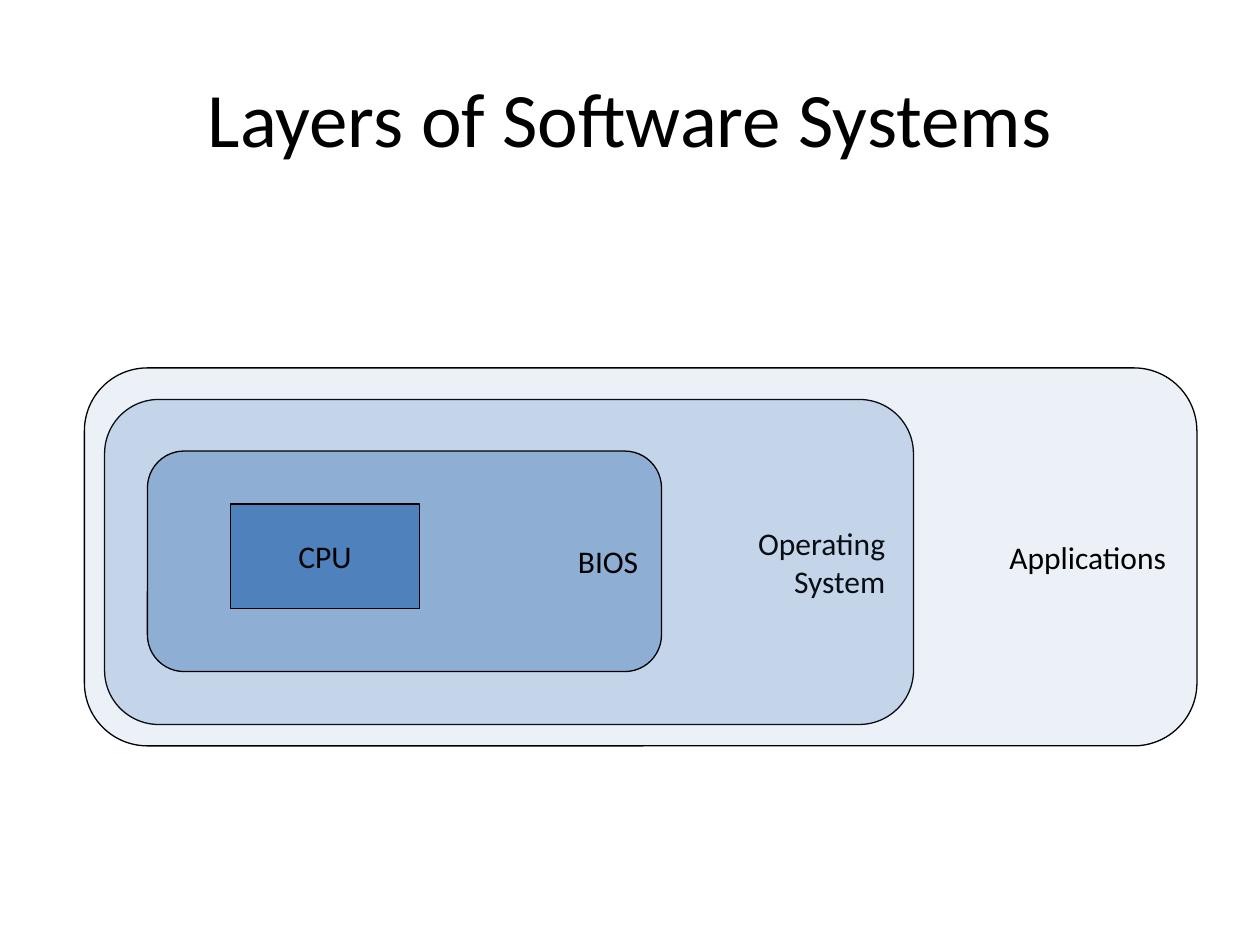
from dataclasses import dataclass

from lxml import etree
from pptx import Presentation
from pptx import util as u
from pptx.dml.color import RGBColor
from pptx.enum import shapes, text
from pptx.oxml.ns import qn


@dataclass(frozen=True)
class Theme:
    blue: RGBColor = RGBColor(0x4F, 0x81, 0xBD)
    ink: RGBColor = RGBColor(0, 0, 0)
    font: str = "Calibri"
    head: int = 44
    body: int = 18
    edge: float = 0.75


THEME = Theme()
ROUND = shapes.MSO_SHAPE.ROUNDED_RECTANGLE
RECT = shapes.MSO_SHAPE.RECTANGLE
RIGHT = text.PP_ALIGN.RIGHT
CENTER = text.PP_ALIGN.CENTER

# Label, preset, box in inches, opacity in percent, alignment; back to front
LAYERS = [
    ("Operating\nSystem", ROUND, (0.83, 3.17, 6.42, 2.58), 24, RIGHT),
    ("Applications", ROUND, (0.67, 2.92, 8.83, 3), 11, RIGHT),
    ("BIOS", ROUND, (1.17, 3.58, 4.08, 1.75), 46, RIGHT),
    ("CPU", RECT, (1.83, 4, 1.5, 0.83), 100, CENTER),
]


def apply(item, values):
    for name, value in values.items():
        setattr(item, name, value)


def write(frame, words, size, align):
    apply(frame, {"text": words, "word_wrap": True,
                  "vertical_anchor": text.MSO_ANCHOR.MIDDLE})
    for para in frame.paragraphs:
        para.alignment = align
        for run in para.runs:
            apply(run.font, {"name": THEME.font, "size": u.Pt(size)})
            run.font.color.rgb = THEME.ink


def fade(shape, percent):
    """Set the opacity of a solid fill."""
    color = shape.fill._xPr.find(qn("a:solidFill"))[0]
    etree.SubElement(color, qn("a:alpha")).set("val", str(percent * 1000))


def add_title(slide, words):
    title = slide.shapes.title
    box = zip(("left", "top", "width", "height"), (0.5, 0.3, 9, 1.25))
    apply(title, {name: u.Inches(value) for name, value in box})
    write(title.text_frame, words, THEME.head, CENTER)


def add_layer(slide, label, preset, box, opacity, align):
    shape = slide.shapes.add_shape(preset, *map(u.Inches, box))
    shape.shadow.inherit = False
    shape.fill.solid()
    shape.fill.fore_color.rgb = THEME.blue
    if opacity < 100:
        fade(shape, opacity)
    shape.line.color.rgb = THEME.ink
    shape.line.width = u.Pt(THEME.edge)
    write(shape.text_frame, label, THEME.body, align)


def main():
    deck = Presentation()
    apply(deck, {"slide_width": u.Inches(10), "slide_height": u.Inches(7.5)})
    slide = deck.slides.add_slide(deck.slide_layouts.get_by_name("Title Only"))
    add_title(slide, "Layers of Software Systems")
    for layer in LAYERS:
        add_layer(slide, *layer)
    deck.save("out.pptx")


if __name__ == "__main__":
    main()
